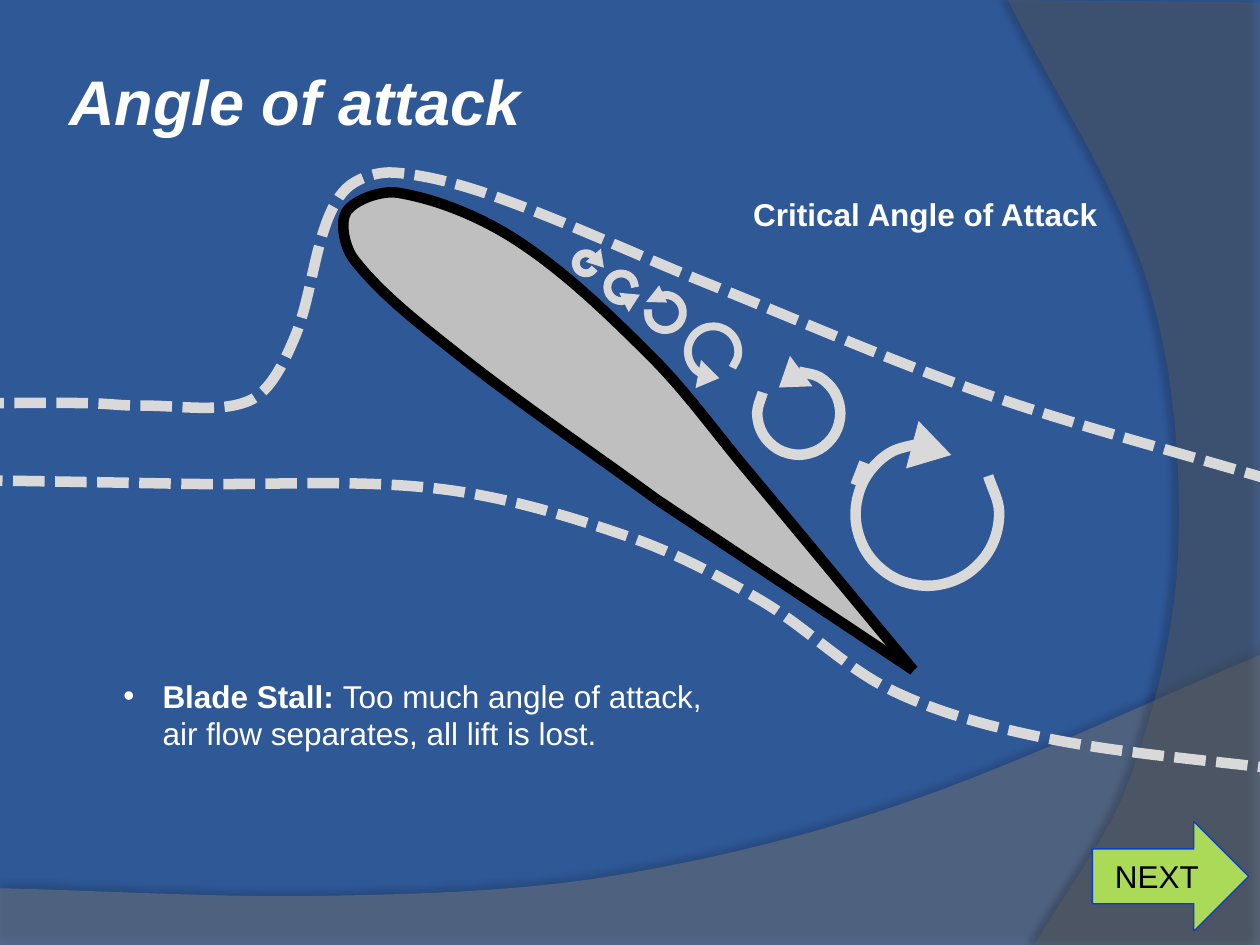
import math

from lxml import etree
from pptx import Presentation
from pptx.dml.color import RGBColor
from pptx.enum.dml import MSO_LINE
from pptx.enum.shapes import MSO_CONNECTOR, MSO_SHAPE
from pptx.enum.text import MSO_ANCHOR, PP_ALIGN
from pptx.oxml.ns import qn
from pptx.util import Inches, Pt

SYS_DASH = MSO_LINE.SQUARE_DOT
STRAIGHT = MSO_CONNECTOR.STRAIGHT
ELLIPSE, TRIANGLE, RIGHT_ARROW = MSO_SHAPE.OVAL, MSO_SHAPE.ISOSCELES_TRIANGLE, MSO_SHAPE.RIGHT_ARROW
MIDDLE, TOP = MSO_ANCHOR.MIDDLE, MSO_ANCHOR.TOP
LEFT, CENTER = PP_ALIGN.LEFT, PP_ALIGN.CENTER

BLUE = RGBColor(0x2F, 0x58, 0x97)
WHITE = RGBColor(0xFF, 0xFF, 0xFF)
BLACK = RGBColor(0, 0, 0)
BAND_GRAY = RGBColor(0x7F, 0x7F, 0x7F)
EDGE_GRAY = RGBColor(0x5E, 0x5E, 0x5E)
WING_GRAY = RGBColor(0xBF, 0xBF, 0xBF)
AIR_GRAY = RGBColor(0xD9, 0xD9, 0xD9)
GREEN = RGBColor(0xAB, 0xD9, 0x58)
BUTTON_BLUE = RGBColor(0x0A, 0x3E, 0xD3)

# Points that a smooth curve passes through, in inches.
BOTTOM_EDGE = [(10, 5.2), (7.13, 6.39), (4.81, 6.96), (2.59, 7.11), (0, 7.05)]
RIGHT_EDGE = [(8, 0), (9.11, 2.25), (9.35, 4.38), (8.96, 6.2), (8.21, 7.5)]
WING_EDGE = [(7.25, 5.32), (5.92, 3.72), (5.16, 2.82), (4.09, 1.9), (3.16, 1.53),
             (2.75, 1.68), (2.81, 2.06), (3.62, 2.8), (5.22, 3.97)]
UPPER_FLOW = [(-0.22, 3.2), (0.7, 3.2), (1.13, 3.22), (1.98, 3.18), (2.33, 2.7), (2.59, 1.77),
              (2.78, 1.47), (3.13, 1.37), (3.93, 1.56), (5.59, 2.24), (7.83, 3.13), (10.19, 3.84)]
LOWER_FLOW = [(-0.23, 3.81), (1.47, 3.84), (3.49, 3.88), (4.99, 4.26), (6.03, 4.76),
              (7.08, 5.48), (8.31, 5.86), (10.27, 6.12)]

# Each swirl: centre, radius, start angle, turn (1 clockwise), arrowhead box and rotation.
SWIRLS = [
    ((4.65, 2.09), 0.08, 30, 1, (4.67, 2.01, 0.16, 0.13), 139.2),
    ((4.93, 2.28), 0.11, 0, -1, (4.93, 2.3, 0.17, 0.14), 63.9),
    ((5.28, 2.48), 0.14, 190, -1, (5.12, 2.29, 0.15, 0.15), 245.1),
    ((5.66, 2.79), 0.2, 40, -1, (5.51, 2.9, 0.23, 0.17), 101.1),
    ((6.34, 3.28), 0.33, 210, -1, (6.12, 2.9, 0.3, 0.22), 233.5),
    ((7.36, 4.08), 0.57, 268, -1, (7.2, 3.41, 0.39, 0.32), 104.8)]
SWIRL_SWEEP, SWIRL_STEPS = 300, 10


def paint(shape, fill=None, line=None, width=0.75):
    shape.shadow.inherit = False
    if fill is None:
        shape.fill.background()
    else:
        shape.fill.solid()
        shape.fill.fore_color.rgb = fill
    if line is None:
        shape.line.fill.background()
    else:
        shape.line.color.rgb = line
        shape.line.width = Pt(width)


def smooth(points):
    """Return Bezier points, three for each step, through all the given points."""
    padded = [points[0], *points, points[-1]]
    slopes = []
    for before, here, after in zip(padded, padded[1:], padded[2:]):
        span = math.dist(before, here) + math.dist(here, after)
        slopes.append([(b - a) / span for a, b in zip(before, after)])
    bezier = []
    for start, end, leave, arrive in zip(points, points[1:], slopes, slopes[1:]):
        reach = math.dist(start, end) / 3
        bezier += [[p + reach * s for p, s in zip(start, leave)],
                   [p - reach * s for p, s in zip(end, arrive)], end]
    return bezier


def add_curve(shapes, points, corners=(), closed=False, **colours):
    """Draw a smooth curve through points, then straight lines to corners."""
    vertices = [(Inches(x), Inches(y)) for x, y in [points[0], *smooth(points), *corners]]
    builder = shapes.build_freeform(*vertices[0], scale=1.0)
    builder.add_line_segments(vertices[1:], close=closed)
    shape = builder.convert_to_shape()
    geometry = next(shape.element.iter(qn("a:path")))
    steps = geometry.findall(qn("a:lnTo"))
    for i in range(0, 3 * (len(points) - 1), 3):
        steps[i].tag = qn("a:cubicBezTo")
        for extra in steps[i + 1:i + 3]:
            steps[i].append(extra[0])
            geometry.remove(extra)
    paint(shape, **colours)
    return shape


def add_band(shapes, edge, corners, colour, alpha, shadow_alpha, distance, direction):
    """Add a see-through background band with a soft shadow along its edge."""
    band = add_curve(shapes, edge, corners, closed=True, fill=colour)
    fill_colour = band.element.spPr.find(qn("a:solidFill"))[0]
    etree.SubElement(fill_colour, qn("a:alpha"), val=str(alpha * 1000))
    shadow = etree.SubElement(
        band.element.spPr.find(qn("a:effectLst")), qn("a:outerShdw"), blurRad=str(Pt(4)),
        dist=str(Pt(distance)), dir=str(direction * 60000), rotWithShape="0")
    shadow_colour = etree.SubElement(shadow, qn("a:srgbClr"), val=str(BLACK))
    etree.SubElement(shadow_colour, qn("a:alpha"), val=str(shadow_alpha * 1000))


def add_preset(shapes, preset, box, rotation=0, **colours):
    shape = shapes.add_shape(preset, *map(Inches, box))
    shape.rotation = rotation
    paint(shape, **colours)
    return shape


def add_line(shapes, start, end, colour, width):
    line = shapes.add_connector(STRAIGHT, *map(Inches, start + end))
    line.line.color.rgb = colour
    line.line.width = Pt(width)
    etree.SubElement(line.element.spPr, qn("a:effectLst"))


def add_swirl(shapes, centre, radius, start, turn, head, rotation):
    trail = []
    for step in range(SWIRL_STEPS + 1):
        angle = math.radians(start + turn * SWIRL_SWEEP * step / SWIRL_STEPS)
        trail.append((centre[0] + radius * math.cos(angle), centre[1] + radius * math.sin(angle)))
    add_curve(shapes, trail, line=AIR_GRAY, width=6 if radius > 0.3 else 4.5)
    add_preset(shapes, TRIANGLE, head, rotation, fill=AIR_GRAY)


def add_wing(shapes):
    add_preset(shapes, ELLIPSE, (2.72, 1.57, 0.28, 0.33), fill=WING_GRAY)
    wing = shapes.add_group_shape().shapes
    add_curve(wing, WING_EDGE, closed=True, fill=WING_GRAY)
    add_curve(wing, WING_EDGE, line=BLACK, width=6)
    add_line(shapes, WING_EDGE[-1], WING_EDGE[0], BLACK, 6)


def place(shape, left, top, width, height):
    shape.left, shape.top, shape.width, shape.height = map(Inches, (left, top, width, height))


def write_text(shape, text, lead="", size=18, colour=WHITE, bold=False, italic=False,
               align=LEFT, anchor=TOP):
    """Write one paragraph, with an optional bold lead before the text."""
    frame = shape.text_frame
    frame.word_wrap = True
    frame.vertical_anchor = anchor
    paragraph = frame.paragraphs[0]
    paragraph.alignment = align
    paragraph.space_before = Pt(0)
    for words, heavy in ((lead, True), (text, bold)):
        if words:
            run = paragraph.add_run()
            run.text = words
            run.font.name = "Arial"
            run.font.size = Pt(size)
            run.font.bold = heavy
            run.font.italic = italic
            run.font.color.rgb = colour


def set_bullet(shape, indent):
    properties = shape.text_frame.paragraphs[0]._p.get_or_add_pPr()
    properties.set("marL", str(Inches(indent)))
    properties.set("indent", str(-Inches(indent)))
    etree.SubElement(properties, qn("a:buChar"), char="•")


def main():
    prs = Presentation()
    prs.slide_width, prs.slide_height = Inches(10), Inches(7.5)
    slide = prs.slides.add_slide(prs.slide_layouts[1])
    slide.background.fill.solid()
    slide.background.fill.fore_color.rgb = BLUE
    shapes = slide.shapes

    add_band(shapes, BOTTOM_EDGE, [(0, 7.5), (10, 7.5)], BAND_GRAY, 45, 35, 3.5, 270)
    add_band(shapes, RIGHT_EDGE, [(10, 7.5), (10, 0.02)], EDGE_GRAY, 40, 45, 4, 180)
    add_wing(shapes)

    title, stall_note = shapes.title, slide.placeholders[1]
    place(title, 0.5, 0.17, 8.17, 1.25)
    title.text_frame.margin_left = title.text_frame.margin_right = Inches(0.05)
    write_text(title, "Angle of attack", size=36, bold=True, italic=True, anchor=MIDDLE)

    next_button = add_preset(shapes, RIGHT_ARROW, (8.67, 6.52, 1.24, 0.87),
                             fill=GREEN, line=BUTTON_BLUE)
    write_text(next_button, "NEXT", colour=BLACK, align=CENTER, anchor=MIDDLE)

    for flow in (UPPER_FLOW, LOWER_FLOW):
        add_curve(shapes, flow, line=AIR_GRAY, width=6).line.dash_style = SYS_DASH
    for swirl in SWIRLS:
        add_swirl(shapes, *swirl)
    add_line(shapes, (6.79, 3.85), (6.86, 3.67), AIR_GRAY, 6)

    place(stall_note, 0.88, 5.32, 5, 0.71)
    write_text(stall_note, "Too much angle of attack, air flow separates, all lift is lost.",
               lead="Blade Stall: ")
    set_bullet(stall_note, 0.31)
    caption = shapes.add_textbox(*map(Inches, (5.88, 1.5, 3.86, 0.4)))
    write_text(caption, "Critical Angle of Attack", bold=True)
    prs.save("out.pptx")


if __name__ == "__main__":
    main()
